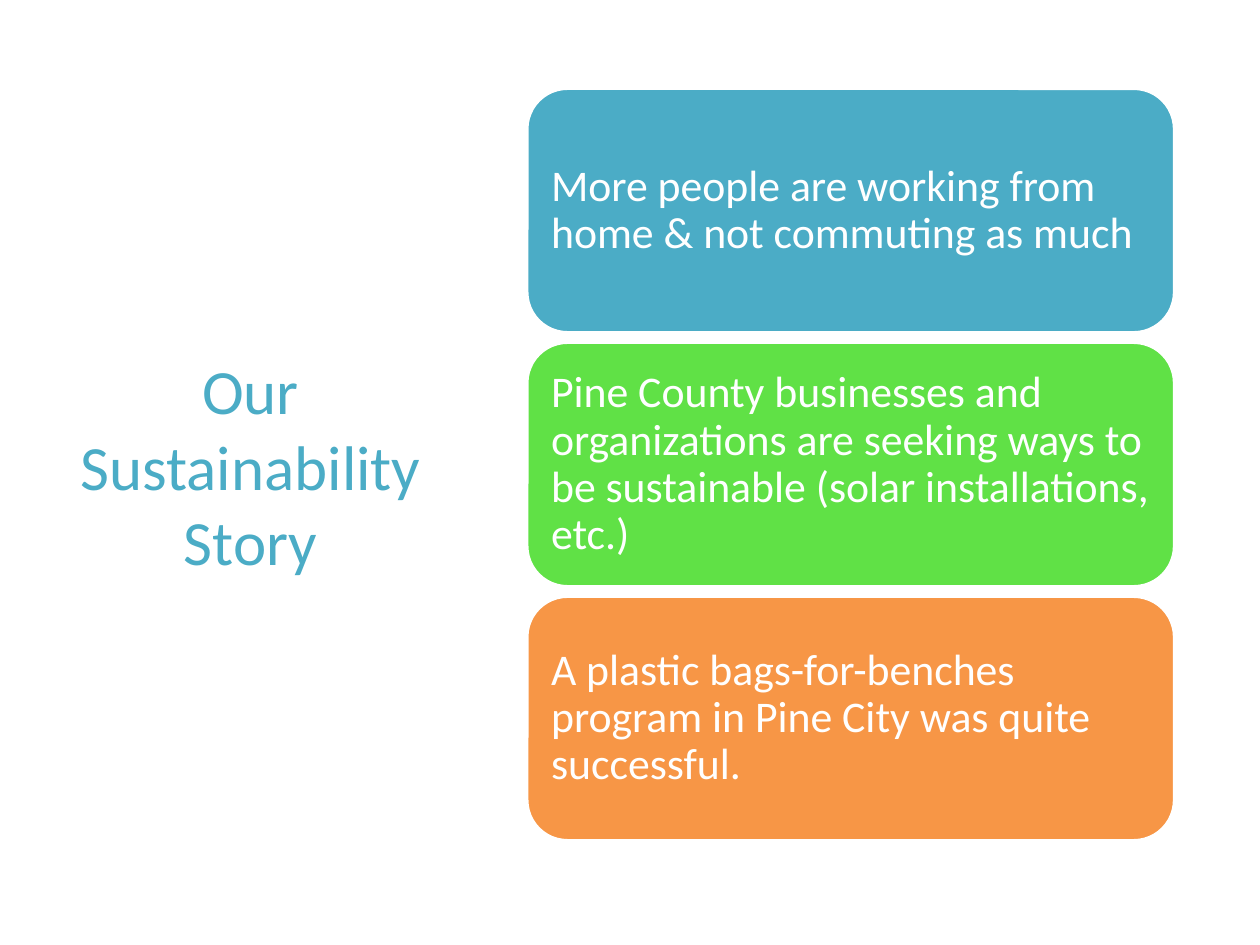
from pptx import Presentation
from pptx.dml.color import RGBColor
from pptx.enum.shapes import MSO_SHAPE
from pptx.enum.text import MSO_ANCHOR, PP_ALIGN
from pptx.util import Cm, Pt

HUES = {"blue": "4BACC6", "green": "60E146", "orange": "F79646", "white": "FFFFFF"}
CARDS = [
    ("blue", "More people are working from home & not commuting as much"),
    ("green", "Pine County businesses and organizations are seeking ways to "
              "be sustainable (solar installations, etc.)"),
    ("orange", "A plastic bags-for-benches program in Pine City was quite successful."),
]
LEFT, TOP, WIDE, HIGH, STEP = 10.62, 1.78, 13.06, 4.93, 5.12


def hue(name):
    return RGBColor.from_string(HUES[name])


def style(shape, text, size, color, align):
    frame = shape.text_frame
    frame.text = text
    frame.word_wrap = True
    frame.vertical_anchor = MSO_ANCHOR.MIDDLE
    line = frame.paragraphs[0]
    line.alignment = align
    font = line.runs[0].font
    font.name = "Calibri"
    font.size = Pt(size)
    font.color.rgb = hue(color)
    return frame


deck = Presentation()
deck.slide_width, deck.slide_height = Cm(25.4), Cm(19.05)
slide = deck.slides.add_slide(deck.slide_layouts[5])

title = slide.shapes.title
title.left, title.top, title.width, title.height = Cm(1.09), Cm(1.73), Cm(7.92), Cm(15.29)
style(title, "Our Sustainability Story", 36, "blue", PP_ALIGN.CENTER)

for row, (color, text) in enumerate(CARDS):
    card = slide.shapes.add_shape(
        MSO_SHAPE.ROUNDED_RECTANGLE, Cm(LEFT), Cm(TOP + row * STEP), Cm(WIDE), Cm(HIGH))
    card.shadow.inherit = False
    card.fill.solid()
    card.fill.fore_color.rgb = hue(color)
    card.line.color.rgb = hue("white")
    card.line.width = Pt(2)
    frame = style(card, text, 25, "white", PP_ALIGN.LEFT)
    frame.margin_left = frame.margin_right = Cm(0.25)
    frame.margin_top = frame.margin_bottom = Cm(0.25)
    frame.paragraphs[0].line_spacing = 0.9

deck.save("out.pptx")
